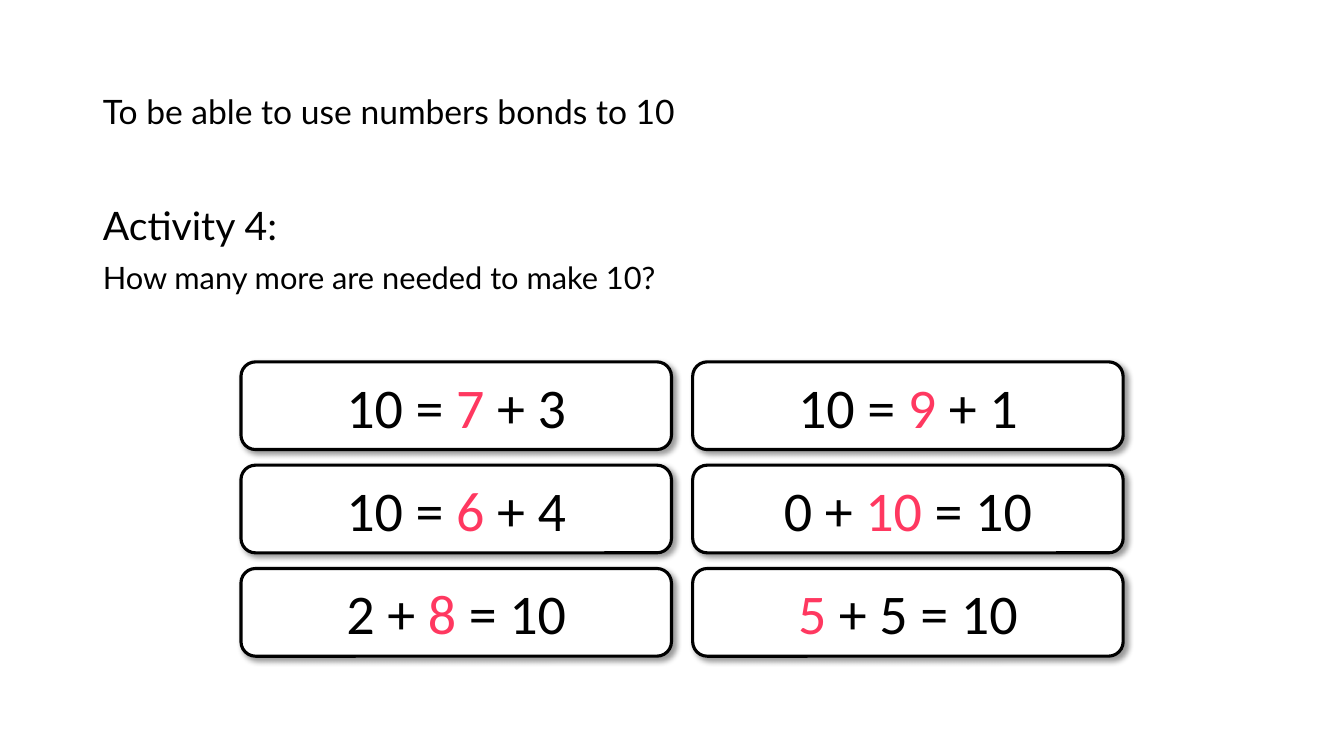
from lxml import etree
from pptx import Presentation
from pptx.dml.color import RGBColor
from pptx.enum.shapes import MSO_SHAPE
from pptx.enum.text import MSO_ANCHOR, MSO_AUTO_SIZE, PP_ALIGN
from pptx.oxml.ns import qn
from pptx.util import Inches, Pt

COLORS = {"ink": "000000", "card": "FFFFFF", "answer": "FF3860"}

# Rows of cards; each card is (before, answer, after)
NUMBER_BONDS = [
    [("10 = ", "7", " + 3"), ("10 = ", "9", " + 1")],
    [("10 = ", "6", " + 4"), ("0 + ", "10", " = 10")],
    [("2 + ", "8", " = 10"), ("", "5", " + 5 = 10")],
]


def color(name):
    return RGBColor.from_string(COLORS[name])


def place(shape, left, top, width, height):
    shape.left, shape.top = Inches(left), Inches(top)
    shape.width, shape.height = Inches(width), Inches(height)


def style_line(paragraph, size):
    """Left-aligned Lato line without a bullet."""
    properties = paragraph._p.get_or_add_pPr()
    properties.set("marL", "0")
    properties.set("indent", "0")
    etree.SubElement(properties, qn("a:buNone"))
    paragraph.alignment = PP_ALIGN.LEFT
    paragraph.line_spacing = 0.9
    paragraph.space_before = Pt(0)
    paragraph.font.name = "Lato"
    paragraph.font.size = Pt(size)
    paragraph.font.color.rgb = color("ink")


def add_objective(slide, box):
    objective = slide.shapes.title
    place(objective, *box)
    frame = objective.text_frame
    frame.text = "To be able to use numbers bonds to 10"
    frame.auto_size = MSO_AUTO_SIZE.NONE
    frame.vertical_anchor = MSO_ANCHOR.MIDDLE
    style_line(frame.paragraphs[0], 24)


def add_activity(slide, box):
    activity = slide.placeholders[1]
    place(activity, *box)
    frame = activity.text_frame
    frame.text = "Activity 4:\nHow many more are needed to make 10?"
    frame.auto_size = MSO_AUTO_SIZE.NONE
    heading, question = frame.paragraphs
    style_line(heading, 28)
    style_line(question, 22)
    question.space_before = Pt(10)


def add_shadow(shape):
    """Soft black shadow towards the lower right."""
    shape.shadow.inherit = False
    effects = shape._element.spPr.find(qn("a:effectLst"))
    shadow = etree.SubElement(
        effects, qn("a:outerShdw"), blurRad=str(Pt(4)), dist=str(Pt(3)),
        dir="2700000", algn="tl", rotWithShape="0")
    shade = etree.SubElement(shadow, qn("a:srgbClr"), val=COLORS["ink"])
    etree.SubElement(shade, qn("a:alpha"), val="40000")


def add_card(slide, box, bond):
    card = slide.shapes.add_shape(
        MSO_SHAPE.ROUNDED_RECTANGLE, *(Inches(length) for length in box))
    card.fill.solid()
    card.fill.fore_color.rgb = color("card")
    card.line.color.rgb = color("ink")
    card.line.width = Pt(2.25)
    add_shadow(card)
    card.text_frame.vertical_anchor = MSO_ANCHOR.MIDDLE
    equation = card.text_frame.paragraphs[0]
    equation.alignment = PP_ALIGN.CENTER
    equation.font.name = "Calibri"
    equation.font.size = Pt(40)
    for part, ink in zip(bond, ("ink", "answer", "ink")):
        if part:
            run = equation.add_run()
            run.text = part
            run.font.color.rgb = color(ink)


def add_card_grid(slide, box, gap_x=0.21, gap_y=0.155):
    left, top, width, height = box
    rows, columns = len(NUMBER_BONDS), len(NUMBER_BONDS[0])
    card_width = (width - gap_x * (columns - 1)) / columns
    card_height = (height - gap_y * (rows - 1)) / rows
    for column in range(columns):
        for row in range(rows):
            card_box = (left + column * (card_width + gap_x),
                        top + row * (card_height + gap_y),
                        card_width, card_height)
            add_card(slide, card_box, NUMBER_BONDS[row][column])


def main():
    deck = Presentation()
    deck.slide_width, deck.slide_height = Inches(13.33), Inches(7.5)
    slide = deck.slides.add_slide(deck.slide_layouts[1])
    add_objective(slide, (0.92, 0.4, 9.6, 1.45))
    add_activity(slide, (0.92, 2, 11.5, 5.1))
    add_card_grid(slide, (2.39, 3.59, 8.75, 2.92))
    deck.save("out.pptx")


if __name__ == "__main__":
    main()
